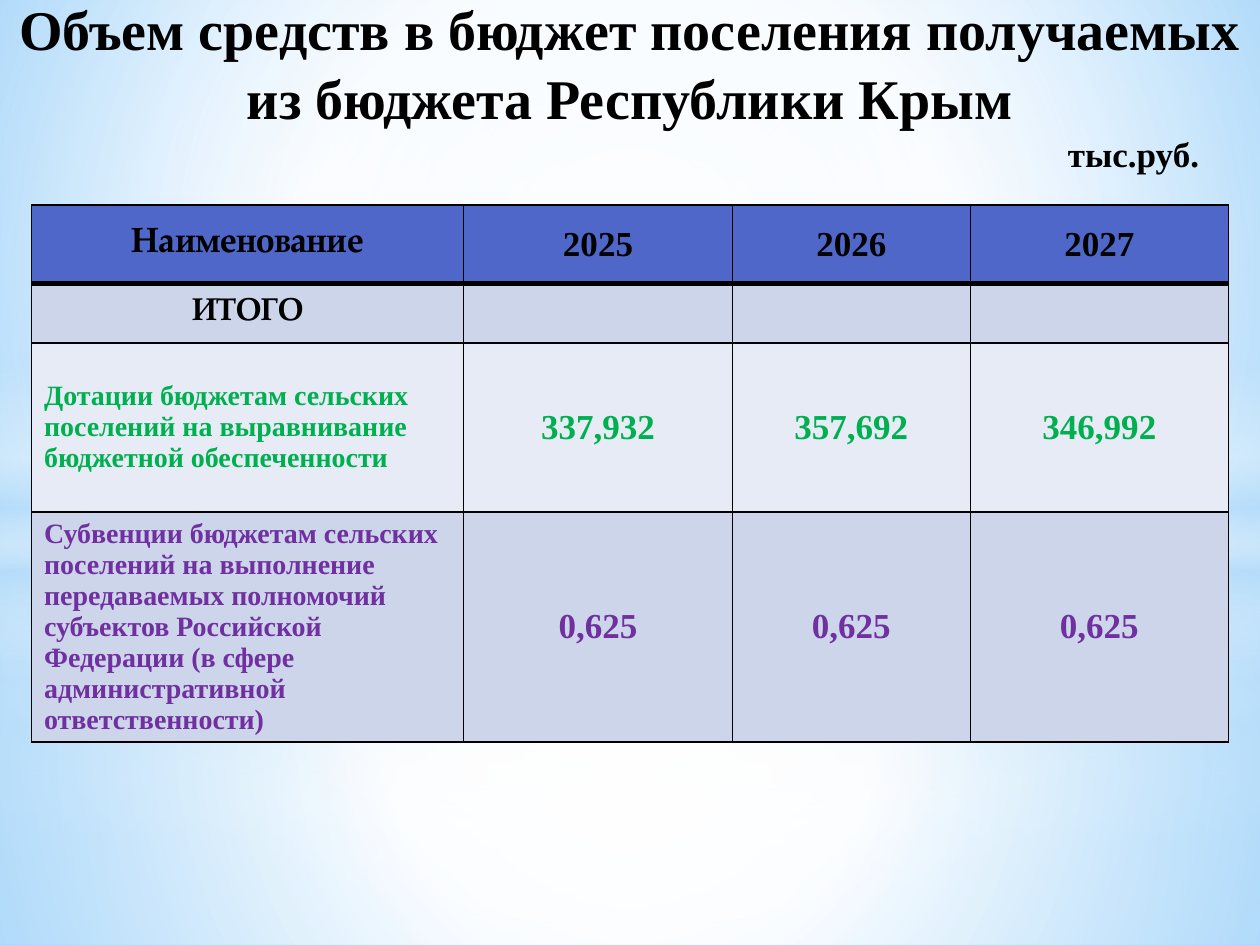
from pptx import Presentation
from pptx.dml.color import RGBColor
from pptx.enum.shapes import MSO_SHAPE
from pptx.enum.text import MSO_ANCHOR, MSO_AUTO_SIZE, PP_ALIGN
from pptx.oxml import parse_xml
from pptx.oxml.ns import nsdecls, qn
from pptx.util import Pt

SERIF, PAGELLA = "Times New Roman", "TeX Gyre Pagella"
BLACK, GREEN, PURPLE = "000000", "00B050", "7030A0"
HEADER, DARK, LIGHT = "4E67C8", "CCD5EA", "E7EBF5"
WHITE, SKY = "FFFFFF", "B4DCFA"
CENTER = (50, 50, 50, 50)
COLUMNS = (247, 153.5, 136, 147.5)
ROWS = (
    (45, HEADER, BLACK, 20, PAGELLA, ("Наименование", "2025", "2026", "2027")),
    (34, DARK, BLACK, 18, PAGELLA, ("ИТОГО", "", "", "")),
    (96.5, LIGHT, GREEN, 16, SERIF,
     ("Дотации бюджетам сельских поселений на выравнивание бюджетной обеспеченности",
      "337,932", "357,692", "346,992")),
    (131.5, DARK, PURPLE, 16, SERIF,
     ("Субвенции бюджетам сельских поселений на выполнение передаваемых полномочий "
      "субъектов Российской Федерации (в сфере административной ответственности)",
      "0,625", "0,625", "0,625")),
)


def rgb(value):
    """Turn a hex string into a colour."""
    return RGBColor.from_string(value)


def write(p, text, size=20, font=SERIF, color=BLACK, align=PP_ALIGN.CENTER):
    """Write bold text into a paragraph."""
    p.alignment = align
    r = p.add_run()
    r.text = text
    r.font.size, r.font.name, r.font.bold = Pt(size), font, True
    r.font.color.rgb = rgb(color)


def set_gradient(props, stops, focus=None):
    """Replace the solid fill by a circular gradient, or a vertical one without focus."""
    gs = "".join(
        f'<a:gs pos="{pos * 1000}"><a:srgbClr val="{color}">'
        f'<a:alpha val="{alpha * 1000}"/></a:srgbClr></a:gs>'
        for pos, color, alpha in stops)
    if focus:
        rect = " ".join(f'{side}="{v * 1000}"' for side, v in zip("ltrb", focus))
        shade = f'<a:path path="circle"><a:fillToRect {rect}/></a:path>'
    else:
        shade = '<a:lin ang="5400000" scaled="0"/>'
    grad = parse_xml(f'<a:gradFill {nsdecls("a")} rotWithShape="1">'
                     f'<a:gsLst>{gs}</a:gsLst>{shade}</a:gradFill>')
    props.replace(props.find(qn("a:solidFill")), grad)


def add_glow(s, kind, top, height, stops, focus=CENTER):
    """Add a full-width gradient shape."""
    sp = s.shapes.add_shape(kind, 0, Pt(top), Pt(720), Pt(height))
    sp.shadow.inherit = False
    sp.line.fill.background()
    sp.fill.solid()
    set_gradient(sp._element.spPr, stops, focus)


def add_backdrop(s, split, band_top, extra, glow_end):
    """Layer sky, ground, horizon band and central glow around a split height."""
    rect = MSO_SHAPE.RECTANGLE
    add_glow(s, rect, split, 540 - split,
             [(0, WHITE, 91 + extra), (37, WHITE, 76 + extra), (100, SKY, 79 + extra)])
    add_glow(s, rect, 0, split,
             [(0, WHITE, 89 + extra), (48, WHITE, 62 + extra), (100, SKY, 79 + extra)])
    add_glow(s, rect, band_top, 180,
             [(0, WHITE, 0), (29, WHITE, 30), (45, SKY, 40),
              (55, WHITE, 26), (65, SKY, 60), (100, WHITE, 0)], None)
    add_glow(s, MSO_SHAPE.OVAL, 126, 402, [(0, WHITE, 100), (glow_end, WHITE, 0)])


def set_borders(cell, top=1, bottom=1):
    """Draw black borders around a cell."""
    tc_pr = cell._tc.get_or_add_tcPr()
    widths = (("lnL", 1), ("lnR", 1), ("lnT", top), ("lnB", bottom))
    for i, (tag, width) in enumerate(widths):
        tc_pr.insert(i, parse_xml(
            f'<a:{tag} {nsdecls("a")} w="{Pt(width)}"><a:solidFill>'
            f'<a:srgbClr val="{BLACK}"/></a:solidFill></a:{tag}>'))


def add_budget_table(s, left, top):
    """Add the table of transfers by year."""
    width, height = sum(COLUMNS), sum(row[0] for row in ROWS)
    table = s.shapes.add_table(len(ROWS), len(COLUMNS), Pt(left), Pt(top),
                               Pt(width), Pt(height)).table
    for column, w in zip(table.columns, COLUMNS):
        column.width = Pt(w)
    for i, (h, fill, color, size, font, texts) in enumerate(ROWS):
        table.rows[i].height = Pt(h)
        for j, text in enumerate(texts):
            cell = table.cell(i, j)
            cell.vertical_anchor = MSO_ANCHOR.MIDDLE
            cell.fill.solid()
            cell.fill.fore_color.rgb = rgb(fill)
            set_borders(cell, top=3 if i == 1 else 1, bottom=3 if i == 0 else 1)
            p = cell.text_frame.paragraphs[0]
            if j == 0:
                write(p, text, size, font, color,
                      PP_ALIGN.CENTER if i < 2 else PP_ALIGN.LEFT)
            elif text:
                write(p, text, color=color)


def place_title(s, left, top, width, height):
    """Fill the title placeholder and bring it to the front."""
    sp = s.shapes.title
    sp.left, sp.top, sp.width, sp.height = Pt(left), Pt(top), Pt(width), Pt(height)
    tf = sp.text_frame
    tf.word_wrap, tf.auto_size = True, MSO_AUTO_SIZE.NONE
    tf.vertical_anchor = MSO_ANCHOR.MIDDLE
    write(tf.paragraphs[0],
          "Объем средств в бюджет поселения получаемых из бюджета Республики Крым", 32)
    unit = tf.add_paragraph()
    write(unit, "тыс.руб.", align=PP_ALIGN.LEFT)
    unit._p.get_or_add_pPr().set("marL", str(Pt(603)))
    for p in tf.paragraphs:
        p.line_spacing, p.space_before = 1.04, Pt(0)
    s.shapes._spTree.append(sp._element)


def main():
    """Build the slide and save it."""
    prs = Presentation()
    prs.slide_width, prs.slide_height = Pt(720), Pt(540)
    s = prs.slides.add_slide(prs.slide_layouts[5])
    s.background.fill.solid()
    set_gradient(s._element.find(".//" + qn("p:bgPr")),
                 [(0, "9ED5FF", 100), (60, WHITE, 100), (100, "5BB9FF", 100)],
                 (20, 10, 20, 60))
    add_backdrop(s, 402, 297, 0, 56)
    add_backdrop(s, 304.5, 209, 1, 54)
    add_budget_table(s, 18, 117)
    place_title(s, 0, 0, 720, 95)
    prs.save("out.pptx")


if __name__ == "__main__":
    main()
